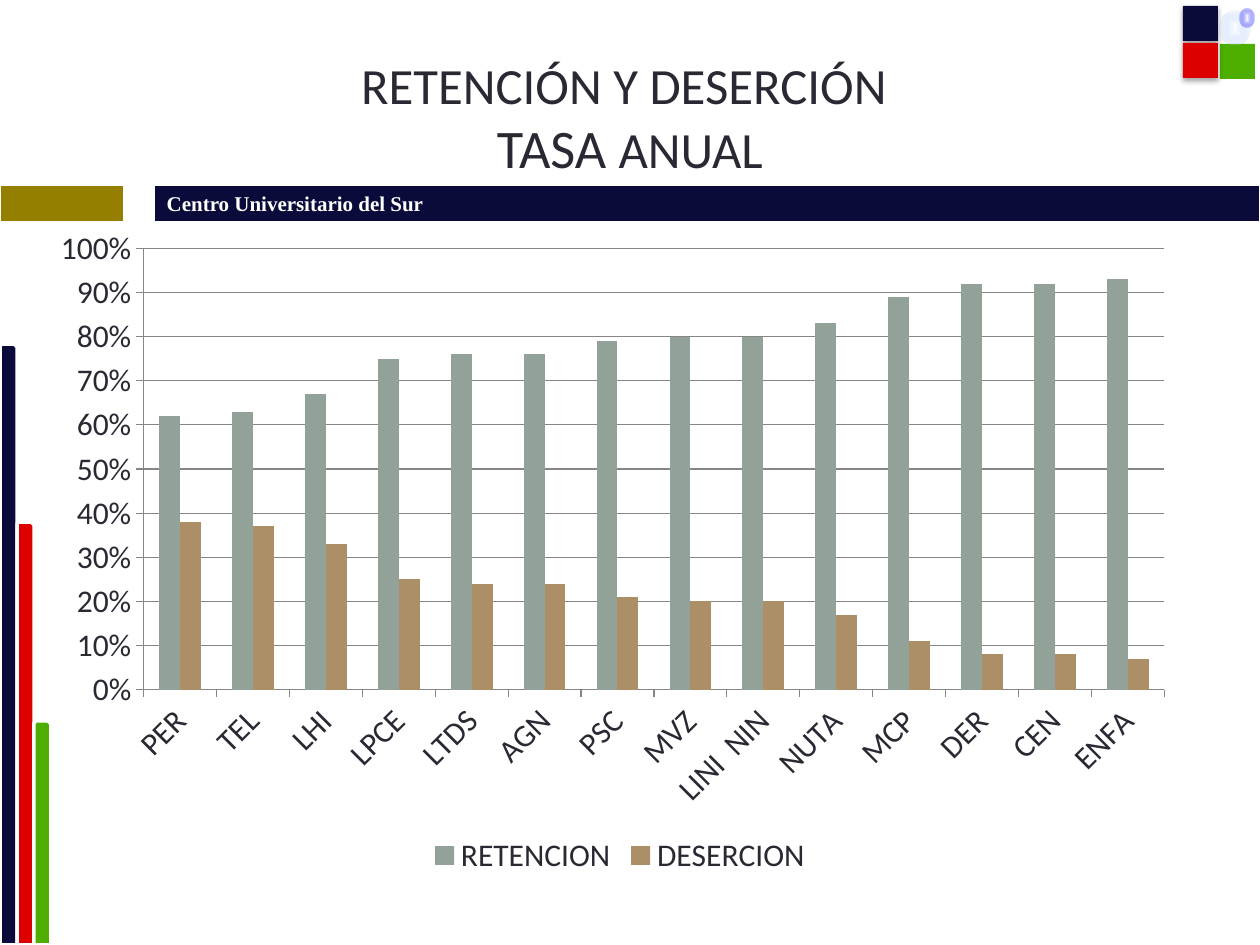
from lxml import etree
from pptx import Presentation, util as u
from pptx.chart.data import CategoryChartData
from pptx.dml.color import RGBColor
from pptx.enum import chart as ch, shapes, text
from pptx.oxml import parse_xml
from pptx.oxml.ns import nsdecls, qn

NAVY, RED, GREEN, GOLD = "0A0B3A", "DC0000", "4DAE00", "947F00"
WHITE, INK, GRID = "FFFFFF", "292934", "868686"
SERIF, SANS = "Times New Roman", "Calibri"
MSO = shapes.MSO_SHAPE

CATEGORIES = ["PER", "TEL", "LHI", "LPCE", "LTDS", "AGN", "PSC", "MVZ",
              "LINI  NIN", "NUTA", "MCP", "DER", "CEN", "ENFA"]
SERIES = [
    ("RETENCION", "93A299", [0.62, 0.63, 0.67, 0.75, 0.76, 0.76, 0.79,
                             0.8, 0.8, 0.83, 0.89, 0.92, 0.92, 0.93]),
    ("DESERCION", "AD8F67", [0.38, 0.37, 0.33, 0.25, 0.24, 0.24, 0.21,
                             0.2, 0.2, 0.17, 0.11, 0.08, 0.08, 0.07]),
]


def px(n):
    return u.Emu(round(n * 914400 / 126))


def rgb(value):
    return RGBColor.from_string(value)


def set_font(font, name, size, color, bold=False):
    font.name = name
    font.size = u.Pt(size)
    font.color.rgb = rgb(color)
    font.bold = bold


def add_run(p, content, *style):
    r = p.add_run()
    r.text = content
    set_font(r.font, *style)


def add_block(s, kind, box, fill, line=None):
    sp = s.shapes.add_shape(kind, *map(px, box))
    sp.shadow.inherit = False
    sp.fill.solid()
    sp.fill.fore_color.rgb = rgb(fill)
    if line:
        sp.line.color.rgb = rgb(line)
        sp.line.width = u.Pt(2)
    else:
        sp.line.fill.background()
    return sp


def add_shadow(sp):
    effects = sp._element.spPr.find(qn("a:effectLst"))
    effects.append(parse_xml(
        f'<a:outerShdw {nsdecls("a")} blurRad="39370" dist="22860" dir="5400000" '
        'rotWithShape="0"><a:srgbClr val="000000"><a:alpha val="35000"/>'
        '</a:srgbClr></a:outerShdw>'))


def add_glow(s, box, color, alpha):
    sp = add_block(s, MSO.OVAL, box, color)
    spPr = sp._element.spPr
    gradient = parse_xml(
        f'<a:gradFill {nsdecls("a")} rotWithShape="1"><a:gsLst>'
        f'<a:gs pos="0"><a:srgbClr val="{WHITE}"/></a:gs>'
        f'<a:gs pos="100000"><a:srgbClr val="{color}">'
        f'<a:alpha val="{alpha * 1000}"/></a:srgbClr></a:gs></a:gsLst>'
        '<a:path path="shape"><a:fillToRect l="50000" t="50000" r="50000" '
        'b="50000"/></a:path></a:gradFill>')
    spPr.replace(spPr.find(qn("a:solidFill")), gradient)


def add_borders(cell):
    tcPr = cell._tc.get_or_add_tcPr()
    for i, (side, width) in enumerate((("L", 1), ("R", 1), ("T", 1), ("B", 3))):
        tcPr.insert(i, parse_xml(
            f'<a:ln{side} {nsdecls("a")} w="{width * 12700}"><a:solidFill>'
            f'<a:srgbClr val="{WHITE}"/></a:solidFill></a:ln{side}>'))


def add_band(s, x, y, w, h):
    widths = [124, 30, w - 154]
    tbl = s.shapes.add_table(1, 3, px(x), px(y), px(w), px(h)).table
    tbl.first_row = tbl.horz_banding = False
    for i, (width, fill) in enumerate(zip(widths, (GOLD, None, NAVY))):
        tbl.columns[i].width = px(width)
        cell = tbl.cell(0, i)
        cell.margin_top = cell.margin_bottom = 0
        cell.vertical_anchor = text.MSO_ANCHOR.MIDDLE
        if fill:
            cell.fill.solid()
            cell.fill.fore_color.rgb = rgb(fill)
        else:
            cell.fill.background()
        add_borders(cell)
        p = cell.text_frame.paragraphs[0]
        if fill == NAVY:
            add_run(p, "Centro Universitario del Sur", SERIF, 12, WHITE, True)
        else:
            etree.SubElement(p._p, qn("a:endParaRPr")).set("sz", "1200")


def add_side_bars(s, x, bottom):
    for i, (height, color) in enumerate(((601, NAVY), (423, RED), (224, GREEN))):
        box = (x + i * 17, bottom - height, 17, height)
        add_block(s, MSO.SNIP_ROUND_RECTANGLE, box, color, WHITE)


def add_corner_squares(s, x, y):
    side, step = 35, 37
    add_block(s, MSO.RECTANGLE, (x + step, y + step + 1, side, side), GREEN)
    for row, color in enumerate((NAVY, RED)):
        add_shadow(add_block(s, MSO.RECTANGLE, (x, y + row * step, side, side), color))
    add_glow(s, (x + 37, y + 5, 30, 35), "A8C1FA", 10)
    add_glow(s, (x + 57, y + 3, 14, 18), "0000FF", 20)


def add_title(s, x, y, w, h):
    tf = s.shapes.add_textbox(*map(px, (x, y, w, h))).text_frame
    tf.word_wrap = True
    tf.vertical_anchor = text.MSO_ANCHOR.MIDDLE
    p = tf.paragraphs[0]
    p.alignment = text.PP_ALIGN.CENTER
    add_run(p, "RETENCIÓN Y DESERCIÓN ", SANS, 29, INK)
    p.add_line_break()
    add_run(p, "TASA ", SANS, 31, INK)
    add_run(p, "ANUAL", SANS, 29, INK)


def set_plot_layout(chart, x, y, w, h):
    area = chart._chartSpace.chart.plotArea
    for old in area.findall(qn("c:layout")):
        area.remove(old)
    area.insert(0, parse_xml(
        f'<c:layout {nsdecls("c")}><c:manualLayout><c:layoutTarget val="inner"/>'
        '<c:xMode val="edge"/><c:yMode val="edge"/>'
        f'<c:x val="{x}"/><c:y val="{y}"/><c:w val="{w}"/><c:h val="{h}"/>'
        '</c:manualLayout></c:layout>'))


def add_rate_chart(s, x, y, w, h):
    data = CategoryChartData(number_format="0%")
    data.categories = CATEGORIES
    for name, _, values in SERIES:
        data.add_series(name, values)
    chart = s.shapes.add_chart(ch.XL_CHART_TYPE.COLUMN_CLUSTERED,
                               *map(px, (x, y, w, h)), data).chart
    set_font(chart.font, SANS, 18, INK)
    chart.has_title = False
    chart.has_legend = True
    chart.legend.position = ch.XL_LEGEND_POSITION.BOTTOM
    chart.legend.include_in_layout = False
    set_plot_layout(chart, 0.08, 0.04, 0.9, 0.67)

    plot = chart.plots[0]
    plot.gap_width = 150
    plot.overlap = 0
    plot.vary_by_categories = False
    for series, (_, color, _) in zip(plot.series, SERIES):
        series.format.fill.solid()
        series.format.fill.fore_color.rgb = rgb(color)

    for axis in (chart.category_axis, chart.value_axis):
        axis.major_tick_mark = ch.XL_TICK_MARK.OUTSIDE
        axis.minor_tick_mark = ch.XL_TICK_MARK.NONE
        axis.format.line.color.rgb = rgb(GRID)
        set_font(axis.tick_labels.font, SANS, 18, INK)
    rates = chart.value_axis
    rates.minimum_scale, rates.maximum_scale, rates.major_unit = 0, 1, 0.1
    rates.tick_labels.number_format = "0%"
    rates.tick_labels.number_format_is_linked = False
    rates.has_major_gridlines = True
    rates.major_gridlines.format.line.color.rgb = rgb(GRID)
    labels = chart.category_axis._element.find(qn("c:txPr"))
    labels.find(qn("a:bodyPr")).set("rot", "-2700000")


def main():
    prs = Presentation()
    prs.slide_width, prs.slide_height = px(1260), px(945)
    s = prs.slides.add_slide(prs.slide_layouts[6])
    add_band(s, 0, 185, 1260, 38)
    add_side_bars(s, 0, 945)
    add_corner_squares(s, 1183, 6)
    add_title(s, 63, 38, 1134, 157)
    add_rate_chart(s, 53, 222, 1134, 659)
    prs.save("out.pptx")


if __name__ == "__main__":
    main()
